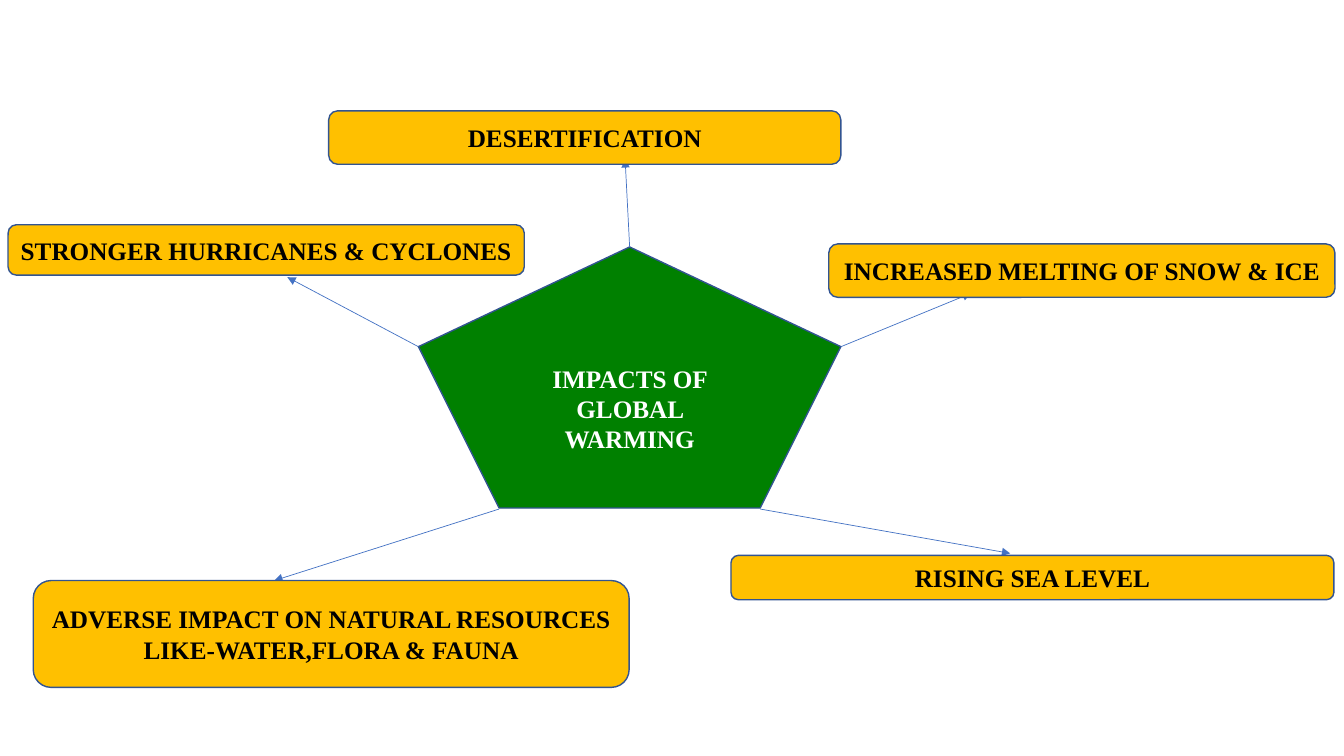
from dataclasses import dataclass

import pptx
import pptx.dml.color
import pptx.enum.shapes
import pptx.enum.text
import pptx.oxml
import pptx.oxml.ns
import pptx.shapes.autoshape
import pptx.util
from lxml import etree

PX = 9144  # EMU: 100 px to the inch
FONT = "Times New Roman"
COLORS = {
    "hub": "008000",
    "box": "FFC000",
    "edge": "325491",
    "arrow": "4472C4",
    "light": "FFFFFF",
    "dark": "000000",
}
SHAPES = pptx.enum.shapes.MSO_SHAPE


@dataclass
class Box:
    text: str
    left: int
    top: int
    width: int
    height: int


@dataclass
class Impact:
    box: Box
    start: tuple[int, int]
    tip: tuple[int, int]


HUB = Box("IMPACTS OF GLOBAL WARMING", 415, 245, 419, 259)
IMPACTS = [
    Impact(Box("DESERTIFICATION", 326, 110, 508, 53), (624, 245), (620, 158)),
    Impact(Box("INCREASED MELTING OF SNOW & ICE", 822, 242, 502, 53),
           (834, 344), (963, 291)),
    Impact(Box("RISING SEA LEVEL", 725, 551, 598, 44), (754, 505), (1002, 549)),
    Impact(Box("ADVERSE IMPACT ON NATURAL RESOURCES LIKE-WATER,FLORA & FAUNA",
               33, 576, 591, 106), (495, 505), (272, 576)),
    Impact(Box("STRONGER HURRICANES & CYCLONES", 8, 223, 512, 50),
           (415, 344), (285, 275)),
]


def px(count: int) -> pptx.util.Emu:
    return pptx.util.Emu(count * PX)


def color(name: str) -> pptx.dml.color.RGBColor:
    return pptx.dml.color.RGBColor.from_string(COLORS[name])


def add_box(slide, box: Box, kind, fill: str, ink: str) -> pptx.shapes.autoshape.Shape:
    shape = slide.shapes.add_shape(
        kind, px(box.left), px(box.top), px(box.width), px(box.height))
    shape.shadow.inherit = False
    shape.fill.solid()
    shape.fill.fore_color.rgb = color(fill)
    shape.line.color.rgb = color("edge")
    shape.line.width = pptx.util.Pt(1)
    frame = shape.text_frame
    frame.word_wrap = True
    frame.vertical_anchor = pptx.enum.text.MSO_ANCHOR.MIDDLE
    para = frame.paragraphs[0]
    para.text = box.text
    para.alignment = pptx.enum.text.PP_ALIGN.CENTER
    para.font.name = FONT
    para.font.size = pptx.util.Pt(18)
    para.font.bold = True
    para.font.color.rgb = color(ink)
    return shape


def add_arrow(slide, impact: Impact):
    arrow = slide.shapes.add_connector(
        pptx.enum.shapes.MSO_CONNECTOR.STRAIGHT,
        *map(px, impact.start), *map(px, impact.tip))
    arrow.line.color.rgb = color("arrow")
    arrow.line.width = pptx.util.Pt(0.5)
    tail = etree.SubElement(arrow.line._get_or_add_ln(), pptx.oxml.ns.qn("a:tailEnd"))
    tail.set("type", "triangle")
    etree.SubElement(arrow._element.spPr, pptx.oxml.ns.qn("a:effectLst"))
    return arrow


def main() -> None:
    deck = pptx.Presentation()
    deck.slide_width = px(1333)
    deck.slide_height = px(750)
    slide = deck.slides.add_slide(deck.slide_layouts[6])

    hub = add_box(slide, HUB, SHAPES.REGULAR_PENTAGON, "hub", "light")
    arrows = [add_arrow(slide, impact) for impact in IMPACTS]
    arrows[0].begin_connect(hub, 0)
    for impact in IMPACTS:
        add_box(slide, impact.box, SHAPES.ROUNDED_RECTANGLE, "box", "dark")

    deck.save("out.pptx")


if __name__ == "__main__":
    main()
